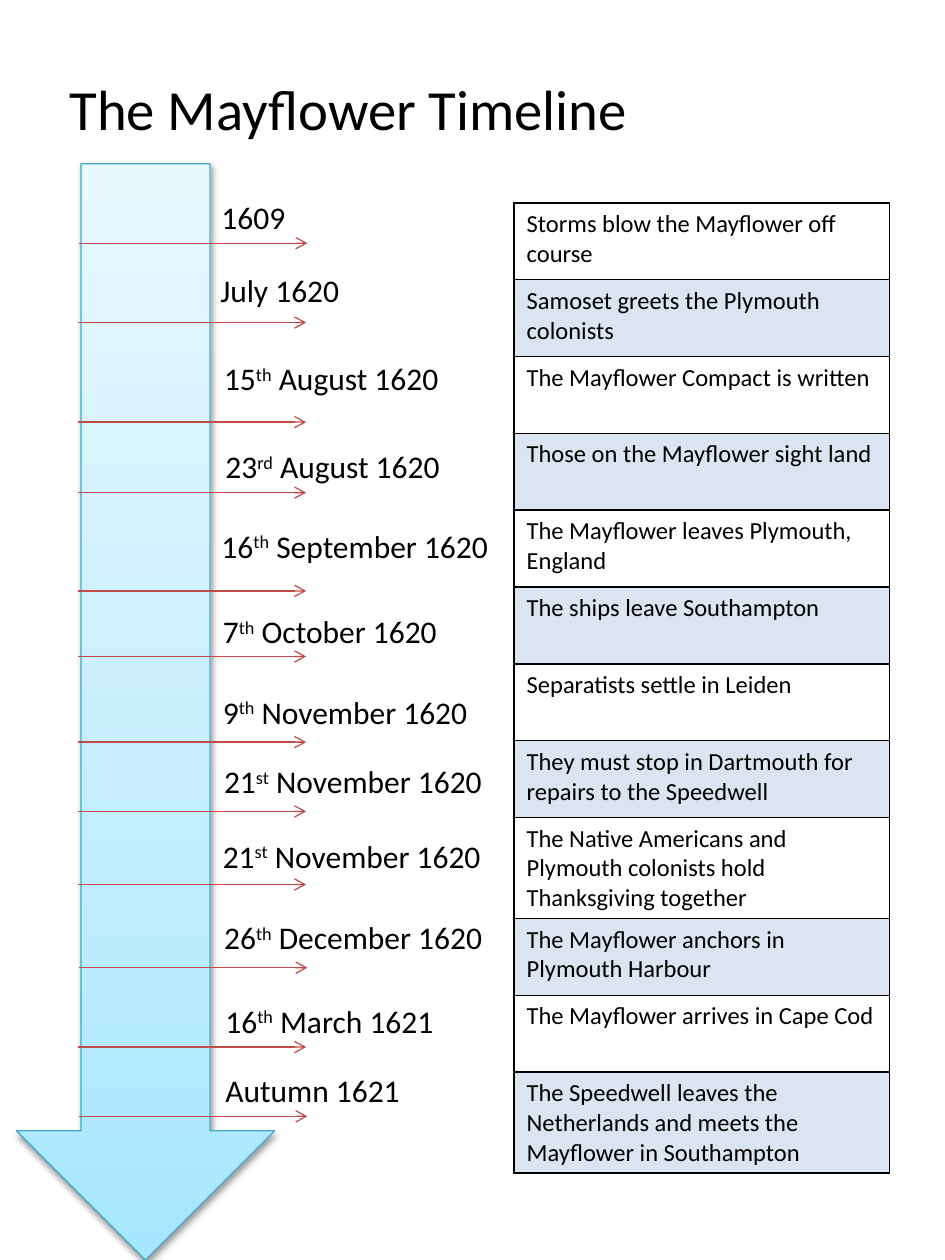
from pptx import Presentation
from pptx.dml.color import RGBColor
from pptx.enum.shapes import MSO_CONNECTOR, MSO_SHAPE
from pptx.enum.text import MSO_ANCHOR, MSO_AUTO_SIZE, PP_ALIGN
from pptx.oxml import parse_xml
from pptx.oxml.ns import nsdecls
from pptx.util import Inches, Pt

# Content
TITLE = "The Mayflower Timeline"
# day, ordinal, rest; label left, top, width; tick left, height on the slide
DATES = [
    ("", "", "1609", 1.66, 1.52, 2.2, 0.63, 1.93),
    ("", "", "July 1620", 1.65, 2.1, 2.44, 0.62, 2.56),
    ("15", "th", " August 1620", 1.68, 2.8, 2.36, 0.62, 3.35),
    ("23", "rd", " August 1620", 1.69, 3.5, 2.36, 0.62, 3.91),
    ("16", "th", " September 1620", 1.66, 4.13, 2.6, 0.62, 4.69),
    ("7", "th", " October 1620", 1.67, 4.81, 3.31, 0.62, 5.21),
    ("9", "th", " November 1620", 1.67, 5.45, 2.23, 0.62, 5.89),
    ("21", "st", " November 1620", 1.68, 6, 3.17, 0.62, 6.44),
    ("21", "st", " November 1620", 1.67, 6.59, 3.17, 0.62, 7.02),
    ("26", "th", " December 1620", 1.68, 7.24, 3.01, 0.63, 7.68),
    ("16", "th", " March 1621", 1.69, 7.9, 2.84, 0.62, 8.31),
    ("", "", "Autumn 1621", 1.69, 8.45, 2.13, 0.63, 8.86),
]
EVENTS = [
    "Storms blow the Mayflower off course",
    "Samoset greets the Plymouth colonists",
    "The Mayflower Compact is written",
    "Those on the Mayflower sight land",
    "The Mayflower leaves Plymouth, England",
    "The ships leave Southampton",
    "Separatists settle in Leiden",
    "They must stop in Dartmouth for repairs to the Speedwell",
    "The Native Americans and Plymouth colonists hold Thanksgiving together",
    "The Mayflower anchors in Plymouth Harbour",
    "The Mayflower arrives in Cape Cod",
    "The Speedwell leaves the Netherlands and meets the Mayflower in Southampton",
]
THEME = {
    "font": "Calibri", "ink": "000000", "tick": "BF4C48", "edge": "46AAC5",
    "band": "4F81BD", "fade": [(0, "A7E6FF"), (35, "C1EDFF"), (100, "E7F8FF")],
    "title": 32.4, "date": 18, "event": 14, "thin": 0.75, "rule": 1,
}
TICK = 1.81
ROW = 0.61

deck = Presentation()
deck.slide_width, deck.slide_height = Inches(7.5), Inches(10)
slide = deck.slides.add_slide(deck.slide_layouts[6])
shapes = slide.shapes


def color(name):
    return RGBColor.from_string(THEME[name])


def xml(tag, body):
    return parse_xml(f"<a:{tag} {nsdecls('a')}{body}")


def write(para, text, size, base=0):
    run = para.add_run()
    run.text = text
    run.font.name, run.font.size = THEME["font"], Pt(THEME[size])
    run.font.color.rgb = color("ink")
    if base:
        run.font._element.set("baseline", str(base * 1000))


def text_box(*area):
    frame = shapes.add_textbox(*map(Inches, area)).text_frame
    frame.word_wrap = True
    return frame


# Title
frame = text_box(0.44, 0.42, 4.65, 0.87)
frame.vertical_anchor = MSO_ANCHOR.MIDDLE
frame.paragraphs[0].alignment = PP_ALIGN.CENTER
write(frame.paragraphs[0], TITLE, "title")

# Time arrow, palest at the top, with a soft shadow
arrow = shapes.add_shape(MSO_SHAPE.DOWN_ARROW, *map(Inches, (0.13, 1.3, 2.05, 8.7)))
arrow.line.color.rgb = color("edge")
arrow.line.width = Pt(THEME["thin"])
stops = "".join(f'<a:gs pos="{pos * 1000}"><a:srgbClr val="{tone}"/></a:gs>'
                for pos, tone in THEME["fade"])
props = arrow._element.spPr
props.insert(2, xml("gradFill", f' rotWithShape="1"><a:gsLst>{stops}</a:gsLst>'
                    '<a:lin ang="16200000" scaled="0"/></a:gradFill>'))
props.append(xml("effectLst", f'><a:outerShdw blurRad="{Pt(3.1)}" dist="{Pt(1.6)}" '
                 'dir="5400000" rotWithShape="0"><a:srgbClr val="000000">'
                 '<a:alpha val="38000"/></a:srgbClr></a:outerShdw></a:effectLst>'))

# Ticks and dates
for day, suffix, rest, left, top, width, start, level in DATES:
    tick = shapes.add_connector(MSO_CONNECTOR.STRAIGHT, *map(
        Inches, (start, level, start + TICK, level)))
    tick.line.color.rgb = color("tick")
    tick.line.width = Pt(THEME["thin"])
    tick.line._get_or_add_ln().append(xml("tailEnd", ' type="arrow"/>'))
    tick._element.spPr.append(xml("effectLst", "/>"))

    frame = text_box(left, top, width, 0.4)
    frame.auto_size = MSO_AUTO_SIZE.SHAPE_TO_FIT_TEXT
    for part, base in ((day, 0), (suffix, 30), (rest, 0)):
        if part:
            write(frame.paragraphs[0], part, "date", base)

# Table of events, every second row tinted
table = shapes.add_table(len(EVENTS), 1, *map(
    Inches, (4.08, 1.61, 2.98, ROW * len(EVENTS)))).table
table.first_row = table.horz_banding = False
for num, event in enumerate(EVENTS):
    table.rows[num].height = Inches(ROW)
    cell = table.cell(num, 0)
    write(cell.text_frame.paragraphs[0], event, "event")
    if num % 2:
        cell.fill.solid()
        cell.fill.fore_color.rgb = color("band")
        tint = cell._tc.tcPr.find(".//{*}srgbClr")
        tint.append(xml("alpha", ' val="20000"/>'))
    else:
        cell.fill.background()
    for spot, side in enumerate(("lnL", "lnR", "lnT", "lnB")):
        cell._tc.tcPr.insert(spot, xml(
            side, f' w="{Pt(THEME["rule"])}"><a:solidFill><a:srgbClr '
            f'val="{THEME["ink"]}"/></a:solidFill></a:{side}>'))

deck.save("out.pptx")
